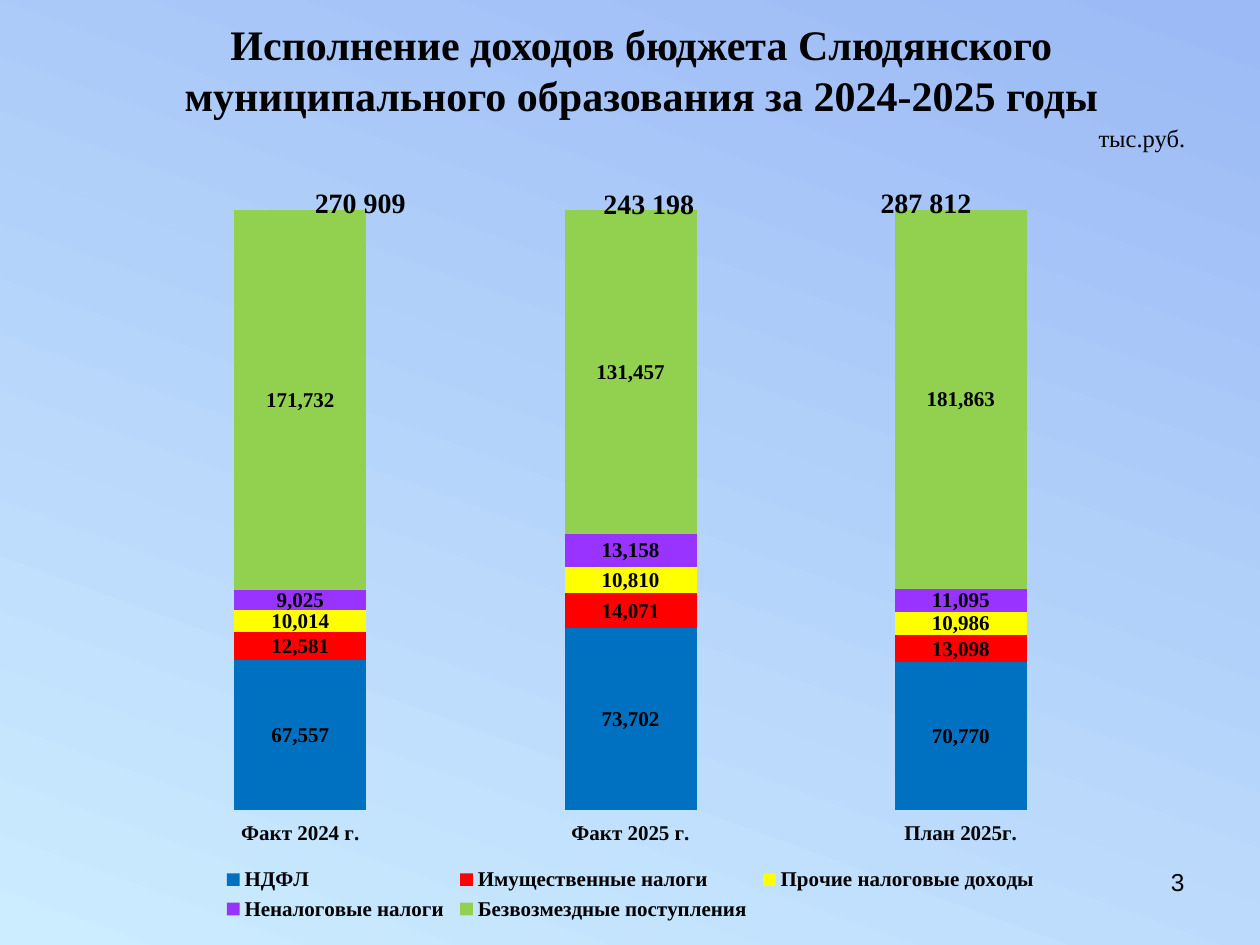
from pptx import Presentation
from pptx.chart.data import CategoryChartData
from pptx.dml.color import RGBColor
from pptx.enum.chart import XL_CHART_TYPE, XL_LEGEND_POSITION, XL_TICK_MARK
from pptx.enum.text import MSO_ANCHOR, PP_ALIGN
from pptx.oxml import parse_xml
from pptx.oxml.ns import nsdecls, qn
from pptx.util import Inches, Pt

BLACK = RGBColor(0x00, 0x00, 0x00)
PALE_BLUE = RGBColor(0xCC, 0xEC, 0xFF)
SKY_BLUE = RGBColor(0x9C, 0xBA, 0xF5)
BLUE = RGBColor(0x00, 0x70, 0xC0)
RED = RGBColor(0xFF, 0x00, 0x00)
YELLOW = RGBColor(0xFF, 0xFF, 0x00)
PURPLE = RGBColor(0x99, 0x33, 0xFF)
GREEN = RGBColor(0x92, 0xD0, 0x50)
SERIF = "Times New Roman"

PERIODS = ["Факт 2024 г.", "Факт 2025 г.", "План 2025г."]
INCOME = [
    ("НДФЛ", (67557, 73702, 70770), BLUE),
    ("Имущественные налоги", (12581, 14071, 13098), RED),
    ("Прочие налоговые доходы", (10014, 10810, 10986), YELLOW),
    ("Неналоговые налоги", (9025, 13158, 11095), PURPLE),
    ("Безвозмездные поступления", (171732, 131457, 181863), GREEN),
]
# Total text, left and top
TOTALS = [("270 909", 2.4, 1.42), ("243 198", 4.69, 1.43), ("287 812", 6.89, 1.42)]


def style_font(font, size, bold=False, name=SERIF):
    font.name = name
    font.size = Pt(size)
    font.bold = bold
    font.color.rgb = BLACK


def add_text(slide, box, text, size, bold=False, name=SERIF,
             align=PP_ALIGN.LEFT, anchor=MSO_ANCHOR.TOP, wrap=True):
    shape = slide.shapes.add_textbox(*(Inches(length) for length in box))
    text_frame = shape.text_frame
    text_frame.word_wrap = wrap
    text_frame.vertical_anchor = anchor
    text_frame.text = text
    paragraph = text_frame.paragraphs[0]
    paragraph.alignment = align
    style_font(paragraph.runs[0].font, size, bold, name)


def set_layout(element, position, box, target=""):
    """Place a chart part by fractions of the chart area."""
    for layout in element.findall(qn("c:layout")):
        element.remove(layout)
    modes = '<c:xMode val="edge"/><c:yMode val="edge"/>'
    sizes = "".join(f'<c:{key} val="{value}"/>' for key, value in zip("xywh", box))
    element.insert(position, parse_xml(
        f'<c:layout {nsdecls("c")}><c:manualLayout>{target}{modes}{sizes}'
        "</c:manualLayout></c:layout>"))


def fill_background(slide):
    fill = slide.background.fill
    fill.gradient()
    fill.gradient_angle = 70
    stops = zip(fill.gradient_stops, ((0, PALE_BLUE), (0.99, SKY_BLUE)))
    for stop, (position, color) in stops:
        stop.position = position
        stop.color.rgb = color


def add_income_chart(slide, box):
    data = CategoryChartData(number_format="#,##0")
    data.categories = PERIODS
    for name, values, _ in INCOME:
        data.add_series(name, values)
    chart = slide.shapes.add_chart(
        XL_CHART_TYPE.COLUMN_STACKED_100,
        *(Inches(length) for length in box), data).chart
    chart.has_title = False
    style_font(chart.font, 10, bold=True)

    # Columns and their labels
    plot = chart.plots[0]
    plot.gap_width = 150
    plot.overlap = 100
    plot.vary_by_categories = False
    for series, (_, _, color) in zip(plot.series, INCOME):
        series.format.fill.solid()
        series.format.fill.fore_color.rgb = color
        labels = series.data_labels
        labels.show_value = True
        labels.number_format = "#,##0"
        labels.number_format_is_linked = False
        style_font(labels.font, 12, bold=True)

    # Axes
    chart.value_axis.visible = False
    chart.value_axis.has_major_gridlines = False
    chart.category_axis.major_tick_mark = XL_TICK_MARK.OUTSIDE
    chart.category_axis.format.line.fill.background()
    style_font(chart.category_axis.tick_labels.font, 12, bold=True)

    # Legend and plot position
    chart.has_legend = True
    legend = chart.legend
    legend.position = XL_LEGEND_POSITION.BOTTOM
    legend.include_in_layout = False
    style_font(legend.font, 12, bold=True)
    plot_area = chart.element.find(".//" + qn("c:plotArea"))
    set_layout(plot_area, 0, (0.02, 0.02, 0.96, 0.82),
               '<c:layoutTarget val="inner"/>')
    set_layout(chart.element.find(".//" + qn("c:legend")), 1,
               (0.1, 0.91, 0.8, 0.09))


def add_totals(slide):
    for text, left, top in TOTALS:
        add_text(slide, (left, top, 0.95, 0.37), text, 16, bold=True, wrap=False)


def main():
    presentation = Presentation()
    presentation.slide_width = Inches(10)
    presentation.slide_height = Inches(7.5)
    slide = presentation.slides.add_slide(presentation.slide_layouts[6])

    fill_background(slide)
    # Page number and title
    add_text(slide, (7.17, 6.83, 2.33, 0.52), "3", 14, name="Arial",
             align=PP_ALIGN.RIGHT)
    add_text(slide, (0.59, 0, 9, 1.1),
             "Исполнение доходов бюджета Слюдянского муниципального "
             "образования за 2024-2025 годы", 24, bold=True,
             align=PP_ALIGN.CENTER, anchor=MSO_ANCHOR.MIDDLE)
    add_income_chart(slide, (0.91, 1.55, 8.19, 5.81))
    # Unit of measure and column totals
    add_text(slide, (8.62, 0.93, 0.95, 0.34), "тыс.руб.", 14, wrap=False)
    add_totals(slide)

    presentation.save("out.pptx")


if __name__ == "__main__":
    main()
